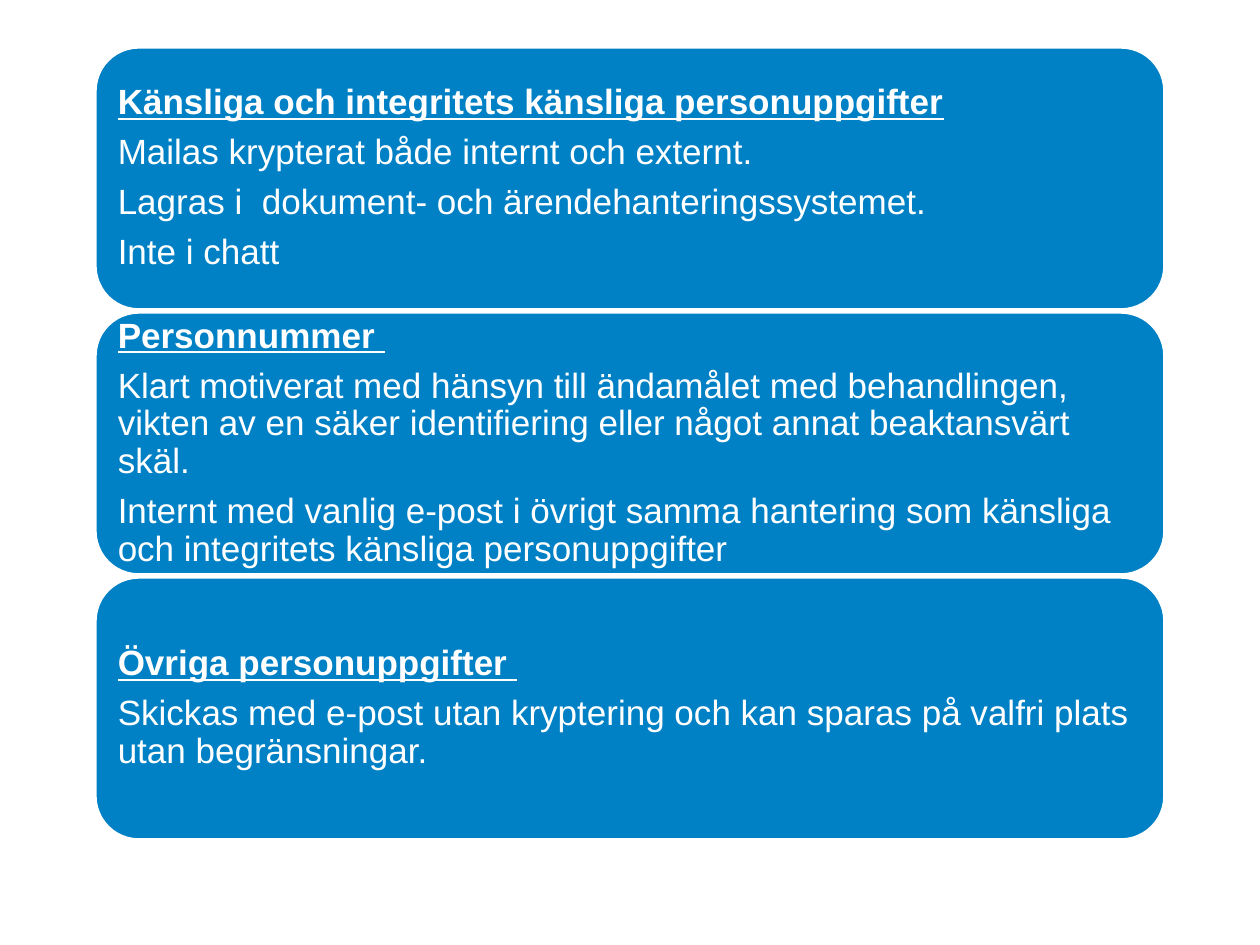
from dataclasses import dataclass

from pptx import Presentation
from pptx.dml.color import RGBColor
from pptx.enum.shapes import MSO_SHAPE
from pptx.enum.text import MSO_ANCHOR, PP_ALIGN
from pptx.util import Emu, Pt

PX_PER_INCH = 126
SLIDE_W, SLIDE_H = 1260, 945
CARD_LEFT, CARD_TOP = 95, 47
CARD_W, CARD_H = 1070, 263
CARD_PITCH = 265
CARD_INSET = 10


@dataclass(frozen=True)
class Theme:
    card: RGBColor = RGBColor(0x00, 0x81, 0xC5)
    white: RGBColor = RGBColor(0xFF, 0xFF, 0xFF)
    font: str = "Arial"
    size: Pt = Pt(20)
    outline: Pt = Pt(2)
    line_spacing: float = 0.9
    space_after: Pt = Pt(7)


THEME = Theme()

CARDS = [
    ("Känsliga och integritets känsliga personuppgifter", [
        "Mailas krypterat både internt och externt.",
        "Lagras i  dokument- och ärendehanteringssystemet.",
        "Inte i chatt",
    ]),
    ("Personnummer ", [
        "Klart motiverat med hänsyn till ändamålet med behandlingen, "
        "vikten av en säker identifiering eller något annat beaktansvärt skäl.",
        "Internt med vanlig e-post i övrigt samma hantering som känsliga "
        "och integritets känsliga personuppgifter",
    ]),
    ("Övriga personuppgifter ", [
        "Skickas med e-post utan kryptering och kan sparas på valfri plats "
        "utan begränsningar.",
    ]),
]


def px(n):
    return Emu(round(n * 914400 / PX_PER_INCH))


def add_paragraph(p, text, heading):
    p.text = text
    p.alignment = PP_ALIGN.LEFT
    p.line_spacing = THEME.line_spacing
    p.space_after = THEME.space_after
    for r in p.runs:
        r.font.name = THEME.font
        r.font.size = THEME.size
        r.font.color.rgb = THEME.white
        r.font.bold = heading
        r.font.underline = heading


def add_card(slide, top, heading, lines):
    sp = slide.shapes.add_shape(MSO_SHAPE.ROUNDED_RECTANGLE, px(CARD_LEFT),
                                px(top), px(CARD_W), px(CARD_H))
    sp.shadow.inherit = False
    sp.fill.solid()
    sp.fill.fore_color.rgb = THEME.card
    sp.line.color.rgb = THEME.white
    sp.line.width = THEME.outline

    tf = sp.text_frame
    tf.word_wrap = True
    tf.vertical_anchor = MSO_ANCHOR.MIDDLE
    tf.margin_left = tf.margin_right = px(CARD_INSET)
    tf.margin_top = tf.margin_bottom = px(CARD_INSET)
    add_paragraph(tf.paragraphs[0], heading, True)
    for line in lines:
        add_paragraph(tf.add_paragraph(), line, False)


def main():
    prs = Presentation()
    prs.slide_width, prs.slide_height = px(SLIDE_W), px(SLIDE_H)
    slide = prs.slides.add_slide(prs.slide_layouts[6])
    for i, (heading, lines) in enumerate(CARDS):
        add_card(slide, CARD_TOP + i * CARD_PITCH, heading, lines)
    prs.save("out.pptx")


if __name__ == "__main__":
    main()
